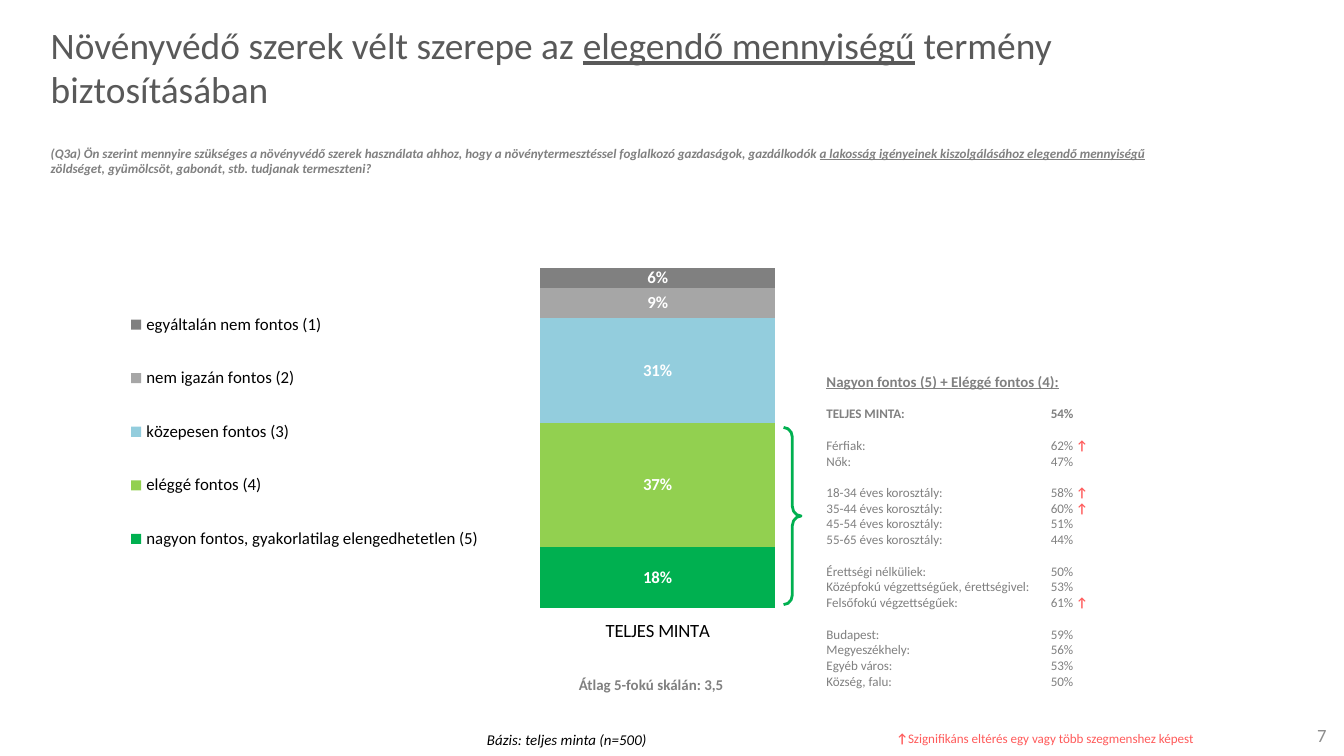
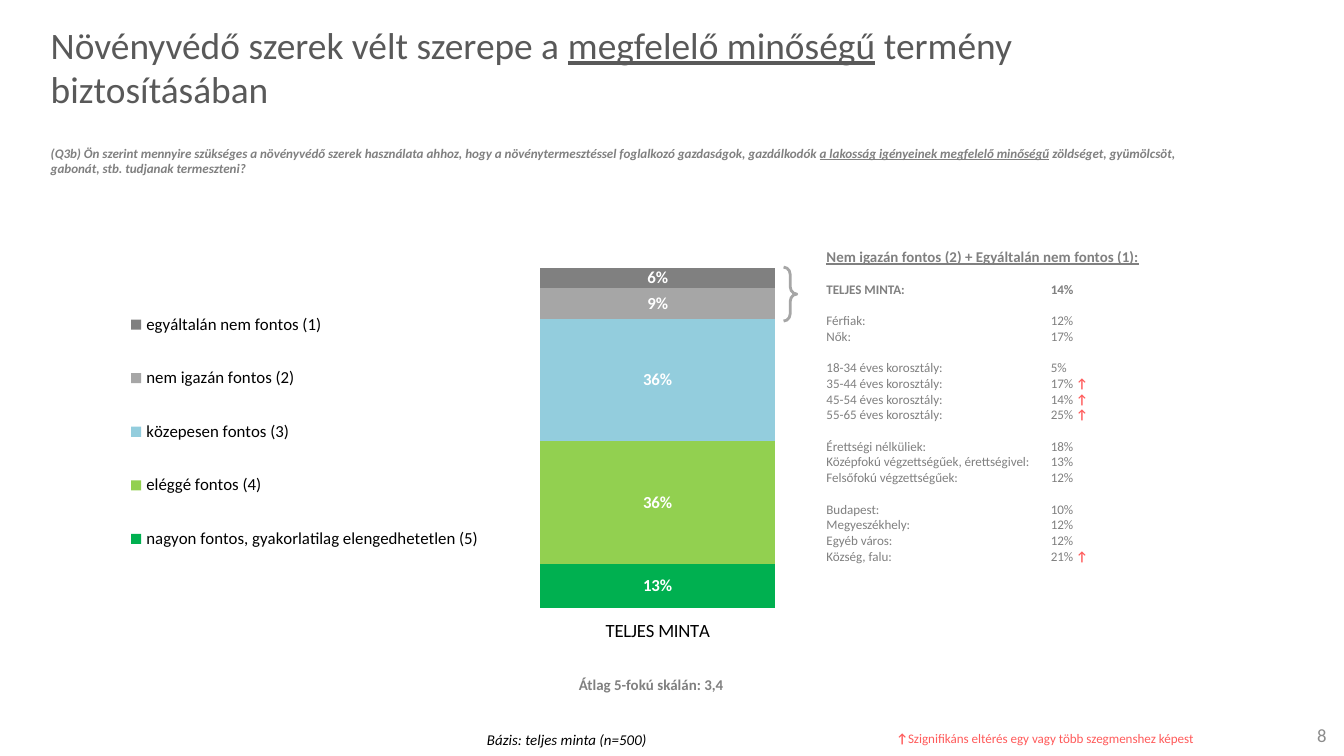
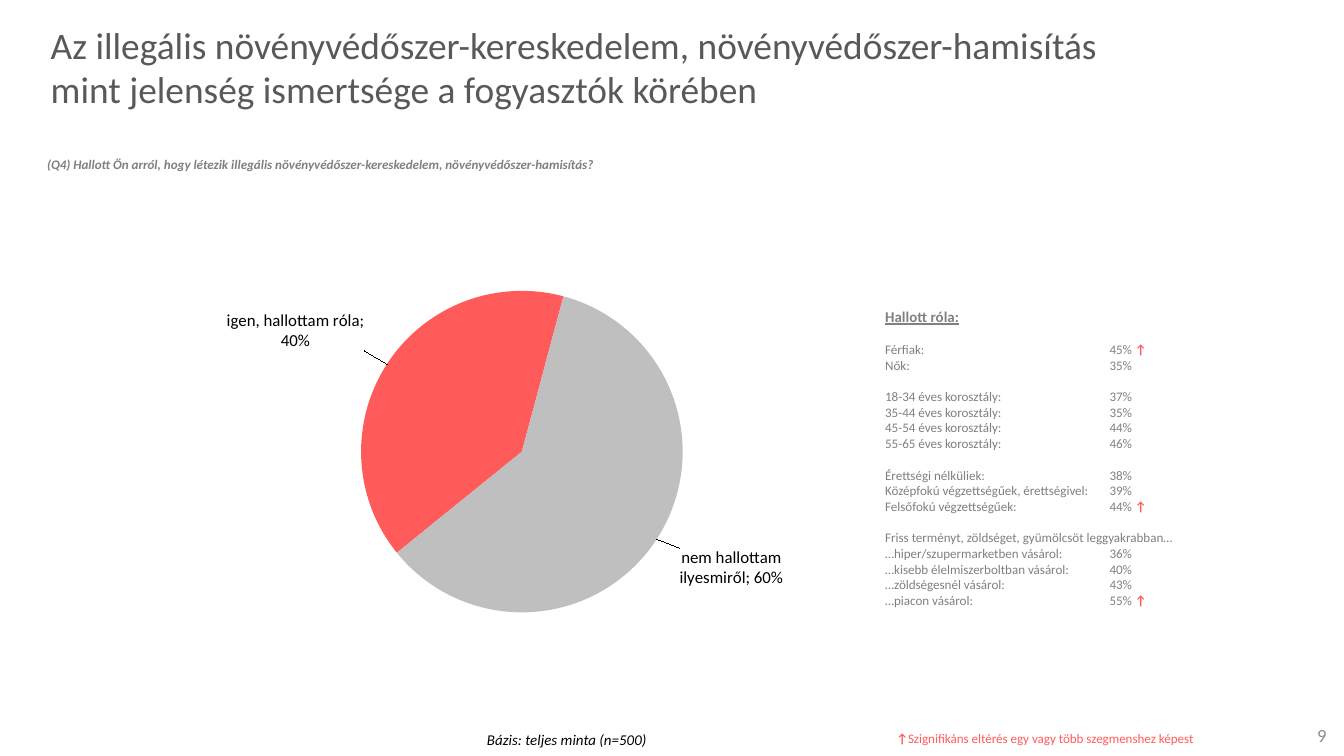
from dataclasses import dataclass

from lxml import etree
from pptx import Presentation
from pptx.chart.data import CategoryChartData
from pptx.dml.color import RGBColor
from pptx.enum.chart import XL_CHART_TYPE, XL_LABEL_POSITION, XL_LEGEND_POSITION
from pptx.enum.shapes import MSO_SHAPE
from pptx.enum.text import MSO_ANCHOR, MSO_AUTO_SIZE, PP_ALIGN
from pptx.oxml.ns import qn
from pptx.util import Cm, Pt

STACKED = XL_CHART_TYPE.COLUMN_STACKED_100
PIE = XL_CHART_TYPE.PIE
OUTSIDE_END = XL_LABEL_POSITION.OUTSIDE_END
LEGEND_LEFT = XL_LEGEND_POSITION.LEFT
RIGHT_BRACE = MSO_SHAPE.RIGHT_BRACE
MIDDLE = MSO_ANCHOR.MIDDLE
FIT_SHAPE = MSO_AUTO_SIZE.SHAPE_TO_FIT_TEXT
CENTER, RIGHT = PP_ALIGN.CENTER, PP_ALIGN.RIGHT


@dataclass(frozen=True)
class Theme:
    font: str = "Calibri"
    title: str = "595959"
    text: str = "808080"
    page: str = "8C8C8C"
    black: str = "000000"
    white: str = "FFFFFF"
    accent: str = "FF5B5B"
    green: str = "00B050"
    lime: str = "92D050"
    blue: str = "93CDDD"
    silver: str = "A6A6A6"
    pale: str = "BFBFBF"
    title_size: int = 20
    axis_size: int = 10
    label_size: int = 9
    note_size: int = 8
    small_size: int = 7


THEME = Theme()
ARROW = "↑"
PERCENT = '0"%"'
TAB_STOP = Cm(4.24)
GROUP_GAP = Pt(8.5)

# Answers from the bottom of the column to the top
ANSWERS = (
    ("nagyon fontos, gyakorlatilag elengedhetetlen (5)", THEME.green),
    ("eléggé fontos (4)", THEME.lime),
    ("közepesen fontos (3)", THEME.blue),
    ("nem igazán fontos (2)", THEME.silver),
    ("egyáltalán nem fontos (1)", THEME.text),
)
TOTAL = ("TELJES MINTA:",)
GENDERS = ("Férfiak:", "Nők:")
AGES = tuple(f"{ages} éves korosztály:" for ages in ("18-34", "35-44", "45-54", "55-65"))
SCHOOLING = ("Érettségi nélküliek:", "Középfokú végzettségűek, érettségivel:",
             "Felsőfokú végzettségűek:")
SETTLEMENTS = ("Budapest:", "Megyeszékhely:", "Egyéb város:", "Község, falu:")
SHOPPING = ("Friss terményt, zöldséget, gyümölcsöt leggyakrabban…",
            "…hiper/szupermarketben vásárol:", "…kisebb élelmiszerboltban vásárol:",
            "…zöldségesnél vásárol:", "…piacon vásárol:")
QUESTION_START = ("Ön szerint mennyire szükséges a növényvédő szerek használata ahhoz, hogy a "
                  "növénytermesztéssel foglalkozó gazdaságok, gazdálkodók ")
QUESTION_END = " zöldséget, gyümölcsöt, gabonát, stb. tudjanak termeszteni?"

IMPORTANCE_SLIDES = (
    {
        "title": ("Növényvédő szerek vélt szerepe az ", "elegendő mennyiségű",
                  " termény biztosításában"),
        "question": ("(Q3a) " + QUESTION_START,
                     "a lakosság igényeinek kiszolgálásához elegendő mennyiségű", QUESTION_END),
        "values": (18, 37, 31, 9, 6),
        "mean": "3,5",
        "brace": (14.81, 8.08, 0.33, 3.35, THEME.green),
        "box": (15.37, 6.91, 6.02, 6.27),
        "heading": "Nagyon fontos (5) + Eléggé fontos (4):",
        "shares": (("54%",), ("62% ↑", "47%"), ("58% ↑", "60% ↑", "51%", "44%"),
                   ("50%", "53%", "61% ↑"), ("59%", "56%", "53%", "50%")),
    },
    {
        "title": ("Növényvédő szerek vélt szerepe a ", "megfelelő minőségű",
                  " termény biztosításában"),
        "question": ("(Q3b) " + QUESTION_START,
                     "a lakosság igényeinek megfelelő minőségű", QUESTION_END),
        "values": (13, 36, 36, 9, 6),
        "mean": "3,4",
        "brace": (14.81, 5.05, 0.25, 1.02, THEME.silver),
        "box": (15.37, 4.55, 6.58, 6.27),
        "heading": "Nem igazán fontos (2) + Egyáltalán nem fontos (1):",
        "shares": (("14%",), ("12%", "17%"), ("5%", "17% ↑", "14% ↑", "25% ↑"),
                   ("18%", "13%", "12%"), ("10%", "12%", "12%", "21% ↑")),
    },
)


def style_font(font, size, color, bold=False, italic=False):
    font.name = THEME.font
    font.size = Pt(size)
    font.bold = bold
    font.italic = italic
    font.color.rgb = RGBColor.from_string(color)


def add_frame(slide, left, top, width, height):
    box = slide.shapes.add_textbox(Cm(left), Cm(top), Cm(width), Cm(height))
    frame = box.text_frame
    frame.word_wrap = True
    frame.auto_size = FIT_SHAPE
    return frame


def add_text(slide, area, parts, size, color, bold=False, italic=False, align=None):
    """One paragraph; every second part is underlined."""
    frame = add_frame(slide, *area)
    paragraph = frame.paragraphs[0]
    paragraph.alignment = align
    style_font(paragraph.font, size, color, bold, italic)
    for index, part in enumerate(parts):
        run = paragraph.add_run()
        run.text = part
        if index % 2:
            run.font.underline = True
    return frame


def add_arrow_run(paragraph):
    run = paragraph.add_run()
    run.text = ARROW
    run.font.bold = True
    run.font.color.rgb = RGBColor.from_string(THEME.accent)


def add_base_slide(presentation, number, title, question, title_width=22.5,
                   question_area=(0.71, 2.62, 21.97, 0.86)):
    """Blank slide with page number, title, question and footer notes."""
    slide = presentation.slides.add_slide(presentation.slide_layouts[6])
    page = add_text(slide, (24, 13.51, 1.32, 0.76), (str(number),), THEME.axis_size,
                    THEME.page, align=RIGHT)
    heading = add_text(slide, (0.71, 0.41, title_width, 1.7), title, THEME.title_size,
                       THEME.title)
    for frame in (page, heading):
        frame.auto_size = MSO_AUTO_SIZE.NONE
        frame.vertical_anchor = MIDDLE
    add_text(slide, question_area, question, THEME.small_size, THEME.text, True, True)
    add_text(slide, (8.15, 13.69, 5.13, 0.61), ("Bázis: teljes minta (n=500)",),
             THEME.note_size, THEME.black, italic=True, align=CENTER)
    note = add_frame(slide, 16.69, 13.69, 6.58, 0.56).paragraphs[0]
    style_font(note.font, THEME.small_size, THEME.accent)
    add_arrow_run(note)
    note.add_run().text = "Szignifikáns eltérés egy vagy több szegmenshez képest"
    return slide


def add_breakdown(slide, area, heading, groups, shares):
    """Heading, then groups of tabbed label and share rows."""
    frame = add_frame(slide, *area)
    paragraph = frame.paragraphs[0]
    style_font(paragraph.font, THEME.note_size, THEME.text, bold=True)
    paragraph.font.underline = True
    paragraph.add_run().text = heading
    for labels, values in zip(groups, shares):
        for index, (label, value) in enumerate(zip(labels, values)):
            paragraph = frame.add_paragraph()
            if index == 0:
                paragraph.space_before = GROUP_GAP
            properties = paragraph._p.get_or_add_pPr()
            tabs = etree.SubElement(properties, qn("a:tabLst"))
            etree.SubElement(tabs, qn("a:tab"), pos=str(TAB_STOP), algn="l")
            style_font(paragraph.font, THEME.small_size, THEME.text, bold=labels is TOTAL)
            share, arrow, _ = value.partition(ARROW)
            paragraph.add_run().text = f"{label}\t{share}" if share else label
            if arrow:
                add_arrow_run(paragraph)


def add_brace(slide, left, top, width, height, color):
    brace = slide.shapes.add_shape(RIGHT_BRACE, Cm(left), Cm(top), Cm(width), Cm(height))
    brace.shadow.inherit = False
    brace.adjustments[0] = 0.555
    brace.fill.background()
    brace.line.color.rgb = RGBColor.from_string(color)
    brace.line.width = Pt(1.5)


def set_layout(parent, index, **values):
    """Give a chart element a manual layout as its child at index."""
    for old in parent.findall(qn("c:layout")):
        parent.remove(old)
    layout = etree.Element(qn("c:layout"))
    manual = etree.SubElement(layout, qn("c:manualLayout"))
    for name, value in values.items():
        etree.SubElement(manual, qn(f"c:{name}"), val=str(value))
    parent.insert(index, layout)


def set_plot_layout(chart, x, y, w, h):
    plot_area = chart._chartSpace.xpath("c:chart/c:plotArea")[0]
    set_layout(plot_area, 0, layoutTarget="inner", xMode="edge", yMode="edge",
               x=x, y=y, w=w, h=h)


def add_chart(slide, kind, area, data, size):
    frame = slide.shapes.add_chart(kind, *(Cm(length) for length in area), data)
    chart = frame.chart
    chart.has_title = False
    chart.has_legend = False
    style_font(chart.font, size, THEME.black)
    return chart


def add_importance_chart(slide, values):
    data = CategoryChartData()
    data.categories = ["TELJES MINTA"]
    for (answer, _), value in zip(ANSWERS, values):
        data.add_series(answer, [value])
    chart = add_chart(slide, STACKED, (0.3, 4.06, 18.49, 8.92), data, THEME.axis_size)
    set_plot_layout(chart, 0.415, 0.113, 0.482, 0.72)

    chart.has_legend = True
    legend = chart.legend
    legend.position = LEGEND_LEFT
    legend.include_in_layout = False
    style_font(legend.font, THEME.label_size, THEME.black)
    set_layout(chart._chartSpace.xpath("c:chart/c:legend")[0], 1, xMode="edge",
               yMode="edge", x=0.11, y=0.14, w=0.37, h=0.64)

    chart.category_axis.format.line.fill.background()
    value_axis = chart.value_axis
    value_axis.visible = False
    value_axis.has_major_gridlines = False
    value_axis.maximum_scale = 1
    value_axis.major_unit = 0.2

    plot = chart.plots[0]
    plot.vary_by_categories = False
    plot.gap_width = 100
    plot.overlap = 100
    for series, (_, color) in zip(plot.series, ANSWERS):
        series.format.fill.solid()
        series.format.fill.fore_color.rgb = RGBColor.from_string(color)
        labels = series.data_labels
        labels.show_value = True
        labels.number_format = PERCENT
        labels.number_format_is_linked = False
        style_font(labels.font, THEME.label_size, THEME.white, bold=True)


def add_awareness_chart(slide):
    data = CategoryChartData()
    data.categories = ["igen, hallottam róla", "nem hallottam ilyesmiről"]
    data.add_series("Series 1", [40, 60])
    chart = add_chart(slide, PIE, (2.77, 4.32, 15.37, 8.61), data, THEME.note_size)
    set_plot_layout(chart, 0.227, 0.137, 0.469, 0.706)
    plot = chart.plots[0]
    plot.vary_by_categories = True
    etree.SubElement(plot._element, qn("c:firstSliceAng"), val="231")

    series = plot.series[0]
    labels = series.data_labels
    labels.show_value = True
    labels.show_category_name = True
    labels.number_format = PERCENT
    labels.number_format_is_linked = False
    style_font(labels.font, THEME.label_size, THEME.black)
    for index, color in enumerate((THEME.accent, THEME.pale)):
        point = series.points[index]
        point.format.fill.solid()
        point.format.fill.fore_color.rgb = RGBColor.from_string(color)
        style_font(point.data_label.font, THEME.label_size, THEME.black)
        point.data_label.position = OUTSIDE_END

    label_offsets = ((-0.02, -0.02), (0.02, 0.01))
    for label, (x, y) in zip(chart._chartSpace.xpath(".//c:dLbl"), label_offsets):
        set_layout(label, 1, x=x, y=y)
        number_format = etree.Element(qn("c:numFmt"), formatCode=PERCENT, sourceLinked="0")
        label.insert(2, number_format)
        label.find(qn("c:showCatName")).set("val", "1")
        etree.SubElement(label, qn("c:separator")).text = "; "


def add_importance_slide(presentation, number, content):
    slide = add_base_slide(presentation, number, content["title"], content["question"])
    add_text(slide, (10.69, 12.65, 3.35, 0.61), (f"Átlag 5-fokú skálán: {content['mean']}",),
             THEME.note_size, THEME.text, bold=True)
    add_importance_chart(slide, content["values"])
    add_brace(slide, *content["brace"])
    add_breakdown(slide, content["box"], content["heading"],
                  (TOTAL, GENDERS, AGES, SCHOOLING, SETTLEMENTS), content["shares"])


def add_awareness_slide(presentation, number):
    title = ("Az illegális növényvédőszer-kereskedelem, növényvédőszer-hamisítás "
             "mint jelenség ismertsége a fogyasztók körében")
    question = ("(Q4) Hallott Ön arról, hogy létezik illegális növényvédőszer-kereskedelem, "
                "növényvédőszer-hamisítás?")
    slide = add_base_slide(presentation, number, (title,), (question,), 21.18,
                           (0.64, 2.84, 15.65, 0.56))
    add_awareness_chart(slide)
    add_breakdown(slide, (16.48, 5.69, 6.02, 5.99), "Hallott róla:",
                  (GENDERS, AGES, SCHOOLING, SHOPPING),
                  (("45% ↑", "35%"), ("37%", "35%", "44%", "46%"),
                   ("38%", "39%", "44% ↑"), ("", "36%", "40%", "43%", "55% ↑")))


def main():
    presentation = Presentation()
    presentation.slide_width = Cm(25.4)
    presentation.slide_height = Cm(14.29)
    for number, content in enumerate(IMPORTANCE_SLIDES, start=7):
        add_importance_slide(presentation, number, content)
    add_awareness_slide(presentation, 9)
    presentation.save("out.pptx")


if __name__ == "__main__":
    main()
